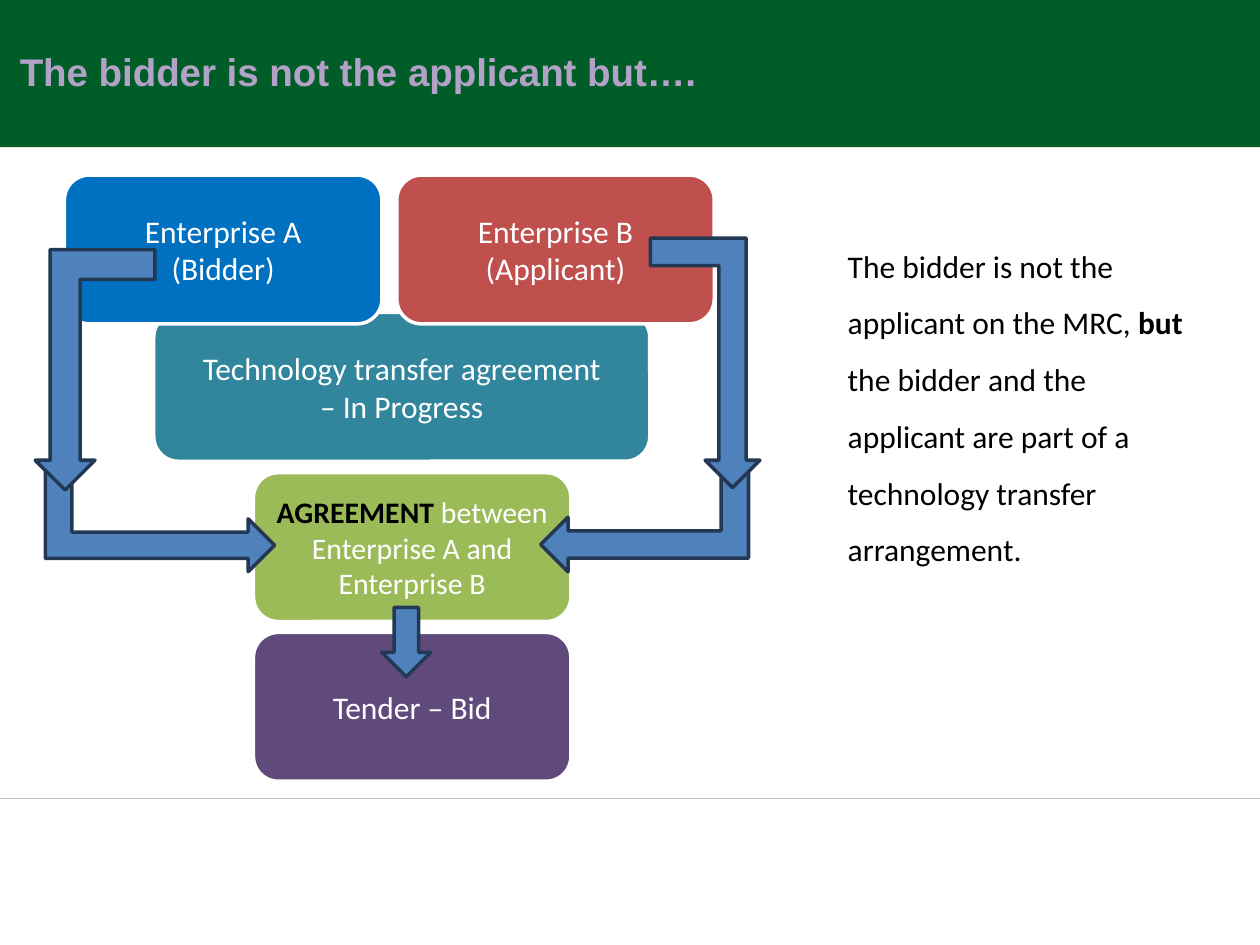
from lxml import etree
from pptx import Presentation
from pptx.dml.color import RGBColor
from pptx.enum import shapes, text
from pptx.oxml.ns import qn
from pptx.util import Cm, Pt

GREEN = RGBColor(0x00, 0x5D, 0x28)
GREY = RGBColor(0xBF, 0xBF, 0xBF)
WHITE = RGBColor(0xFF, 0xFF, 0xFF)
BLACK = RGBColor(0x00, 0x00, 0x00)
LILAC = RGBColor(0xB3, 0xA2, 0xC7)
TEAL = RGBColor(0x31, 0x85, 0x9C)
BLUE = RGBColor(0x00, 0x70, 0xC0)
RED = RGBColor(0xC0, 0x50, 0x4D)
LIME = RGBColor(0x9B, 0xBB, 0x59)
PURPLE = RGBColor(0x60, 0x4A, 0x7B)
ARROW_FILL = RGBColor(0x4F, 0x81, 0xBD)
ARROW_LINE = RGBColor(0x23, 0x39, 0x53)

SHAPE = shapes.MSO_SHAPE
BOX_W, BOX_H = 6.4, 3.0
TOP_Y, CENTRE_X = 3.53, 5.11


def add_filled(s, kind, x, y, w, h, fill, line=None):
    sp = s.shapes.add_shape(kind, Cm(x), Cm(y), Cm(w), Cm(h))
    sp.shadow.inherit = False
    sp.fill.solid()
    sp.fill.fore_color.rgb = fill
    if line is None:
        sp.line.fill.background()
    else:
        sp.line.color.rgb = line
        sp.line.width = Pt(2)
    return sp


def add_run(p, words, size, color, bold=False, font="Calibri"):
    r = p.add_run()
    r.text = words
    r.font.name, r.font.size, r.font.bold = font, Pt(size), bold
    r.font.color.rgb = color


def add_box(s, x, y, fill, lines, w=BOX_W, size=18):
    """Rounded box; each line is a list of (words, colour, bold) runs."""
    sp = add_filled(s, SHAPE.ROUNDED_RECTANGLE, x, y, w, BOX_H, fill, WHITE)
    tf = sp.text_frame
    tf.word_wrap = True
    tf.vertical_anchor = text.MSO_ANCHOR.MIDDLE
    for i, runs in enumerate(lines):
        p = tf.add_paragraph() if i else tf.paragraphs[0]
        p.alignment = text.PP_ALIGN.CENTER
        for words, color, bold in runs:
            add_run(p, words, size, color, bold)


def add_arrow(s, kind, x, y, w, h, rotation, flip=False):
    sp = add_filled(s, kind, x, y, w, h, ARROW_FILL, ARROW_LINE)
    sp.rotation = rotation
    if flip:
        sp.element.spPr.find(qn("a:xfrm")).set("flipH", "1")


def add_text(s, x, y, w, h):
    """Text box with one indented paragraph, which is returned."""
    tf = s.shapes.add_textbox(Cm(x), Cm(y), Cm(w), Cm(h)).text_frame
    tf.word_wrap = True
    p = tf.paragraphs[0]
    pPr = p._p.get_or_add_pPr()
    pPr.set("marL", str(Cm(1.27)))
    pPr.set("indent", "0")
    return p


def add_rule(s, y, width):
    line = s.shapes.add_connector(shapes.MSO_CONNECTOR.STRAIGHT, 0, Cm(y), width, Cm(y))
    line.line.color.rgb = GREY
    line.line.width = Pt(0.75)
    etree.SubElement(line.element.spPr, qn("a:effectLst"))


def main():
    prs = Presentation()
    prs.slide_width, prs.slide_height = Cm(25.4), Cm(19.05)
    s = prs.slides.add_slide(prs.slide_layouts[6])

    # Header band and footer rule
    add_filled(s, SHAPE.RECTANGLE, 0, 0, 25.4, 2.97, GREEN)
    add_rule(s, 16.09, prs.slide_width)

    # Enterprises, agreements and tender
    add_box(s, 3.1, 6.3, TEAL, [[("Technology transfer agreement", WHITE, False)],
                                [("– In Progress", WHITE, False)]], w=10)
    add_box(s, 1.3, TOP_Y, BLUE, [[("Enterprise A", WHITE, False)],
                                  [("(Bidder)", WHITE, False)]])
    add_box(s, CENTRE_X, 9.53, LIME,
            [[("AGREEMENT", BLACK, True), (" between", WHITE, False)],
             [("Enterprise A and Enterprise B", WHITE, False)]], size=17)
    add_box(s, 8, TOP_Y, RED, [[("Enterprise B (Applicant)", WHITE, False)]])
    add_box(s, CENTRE_X, 12.75, PURPLE, [[("Tender – Bid", WHITE, False)]])

    # Arrows from the applicant, from the bidder, and down to the tender
    bent = SHAPE.BENT_UP_ARROW
    add_arrow(s, bent, 11.89, 8.33, 2.21, 4.19, 270, flip=True)
    add_arrow(s, bent, 13.11, 4.8, 2.21, 5.03, 180, flip=True)
    add_arrow(s, bent, 2.16, 8.15, 2.13, 4.62, 90)
    add_arrow(s, bent, 0.71, 5.03, 2.41, 4.85, 180)
    add_arrow(s, SHAPE.RIGHT_ARROW, 7.49, 12.45, 1.4, 0.99, 90)

    # Explanation
    p = add_text(s, 15.57, 4.47, 8.69, 7.06)
    p.level = 1
    p.line_spacing = 1.5
    p.space_after = Pt(6)
    add_run(p, "The bidder is not the applicant on the MRC, ", 18, BLACK)
    add_run(p, "but", 18, BLACK, bold=True)
    add_run(p, " the bidder and the applicant are part of a technology transfer"
               " arrangement.", 18, BLACK)

    # Title
    p = add_text(s, -1.12, 0.84, 21.11, 1.19)
    add_run(p, "The bidder is not the applicant but….", 22, LILAC, bold=True, font="Arial")

    prs.save("out.pptx")


if __name__ == "__main__":
    main()
